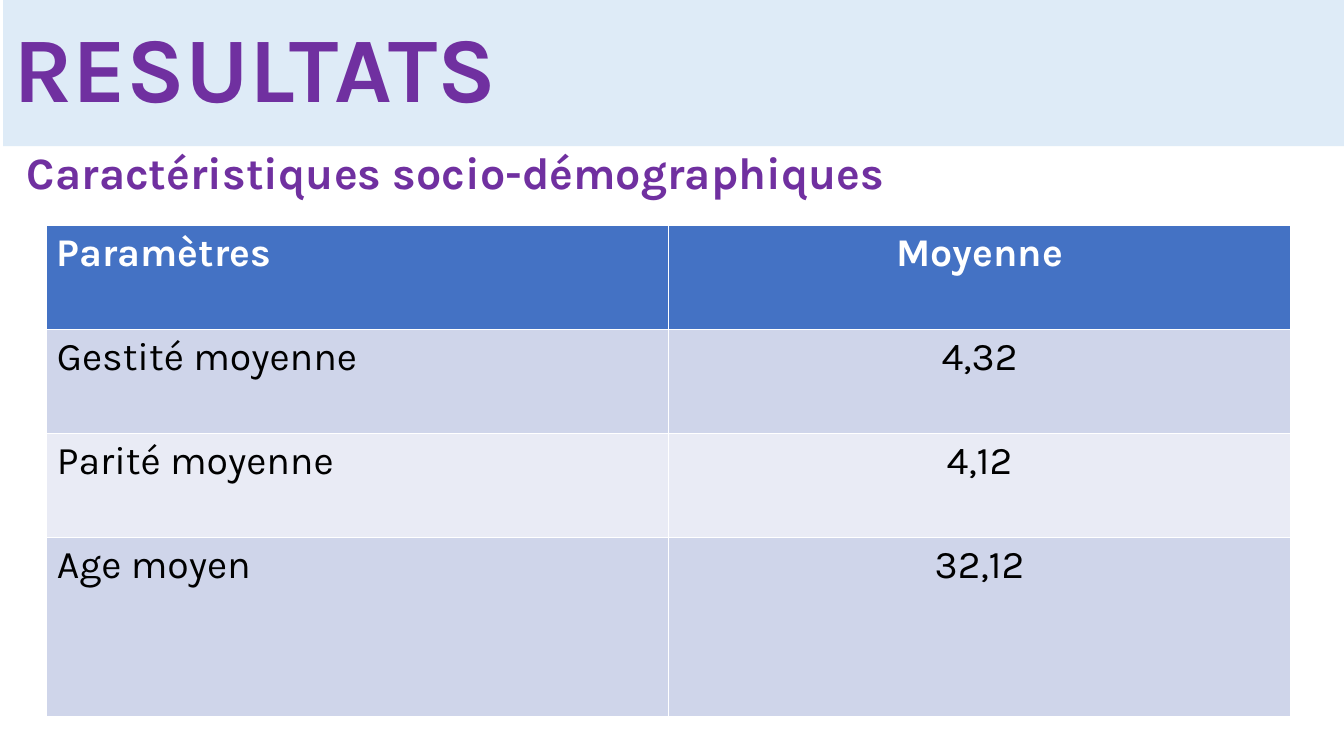
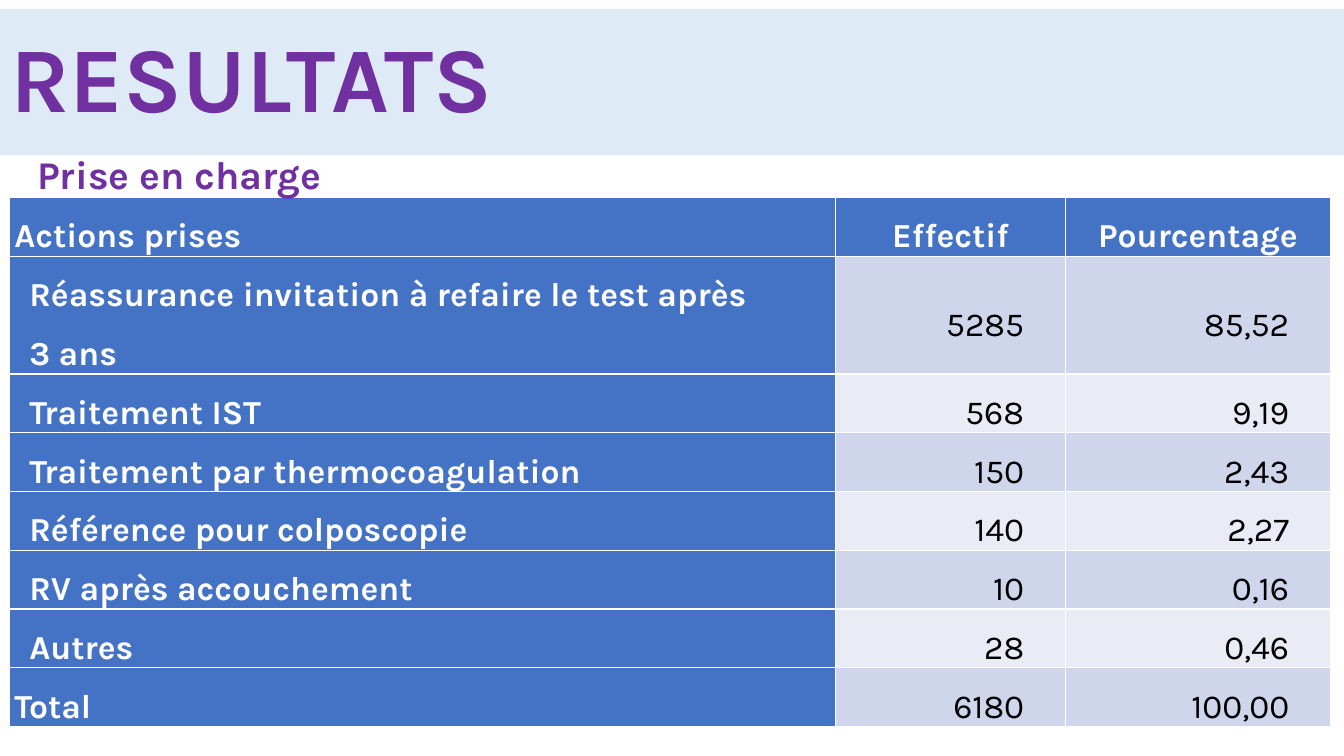
from pptx import Presentation
from pptx.dml.color import RGBColor
from pptx.enum.text import MSO_ANCHOR, MSO_AUTO_SIZE, PP_ALIGN
from pptx.util import Cm, Pt

LEFT, CENTER, RIGHT = PP_ALIGN.LEFT, PP_ALIGN.CENTER, PP_ALIGN.RIGHT
TOP, MIDDLE = MSO_ANCHOR.TOP, MSO_ANCHOR.MIDDLE
NO_AUTOFIT = MSO_AUTO_SIZE.NONE

PURPLE = RGBColor(0x70, 0x30, 0xA0)
PALE_BLUE = RGBColor(0xDE, 0xEB, 0xF7)
BLUE = RGBColor(0x44, 0x72, 0xC4)
BANDS = (RGBColor(0xCF, 0xD5, 0xEA), RGBColor(0xE9, 0xEB, 0xF5))
WHITE = RGBColor(0xFF, 0xFF, 0xFF)
BLACK = RGBColor(0, 0, 0)

FONT = "Karla"
SLIDE_WIDTH, SLIDE_HEIGHT = Cm(33.87), Cm(19.05)
TITLE_HEIGHT = Cm(3.68)
TITLE_ONLY = 5

MEANS = [
    ("Paramètres", "Moyenne"),
    ("Gestité moyenne", "4,32"),
    ("Parité moyenne", "4,12"),
    ("Age moyen", "32,12"),
]
ACTIONS = [
    ("Actions prises", "Effectif", "Pourcentage"),
    ("Réassurance invitation à refaire le test après\n3 ans", "5285", "85,52"),
    ("Traitement IST", "568", "9,19"),
    ("Traitement par thermocoagulation", "150", "2,43"),
    ("Référence pour colposcopie", "140", "2,27"),
    ("RV après accouchement", "10", "0,16"),
    ("Autres", "28", "0,46"),
    ("Total", "6180", "100,00"),
]


def write_text(frame, text, size=28, color=PURPLE, bold=True, align=LEFT, spacing=1.0):
    """Fill a text frame with one formatted paragraph per line of text."""
    for index, line in enumerate(text.split("\n")):
        paragraph = frame.add_paragraph() if index else frame.paragraphs[0]
        paragraph.alignment = align
        paragraph.line_spacing = spacing
        run = paragraph.add_run()
        run.text = line
        run.font.name = FONT
        run.font.size = Pt(size)
        run.font.bold = bold
        run.font.color.rgb = color


def add_results_slide(prs, left, top):
    """Add a slide whose title is a pale band starting at the given corner."""
    slide = prs.slides.add_slide(prs.slide_layouts[TITLE_ONLY])
    title = slide.shapes.title
    title.left, title.top = left, top
    title.width, title.height = SLIDE_WIDTH, TITLE_HEIGHT
    title.fill.solid()
    title.fill.fore_color.rgb = PALE_BLUE
    title.text_frame.auto_size = NO_AUTOFIT
    title.text_frame.vertical_anchor = MIDDLE
    write_text(title.text_frame, "RESULTATS", size=66, spacing=0.9)
    return slide


def add_subtitle(slide, text, left, top, width, **text_format):
    """Add the heading that stands between the title band and the table."""
    subtitle = slide.shapes.add_textbox(left, top, width, Cm(1.45))
    subtitle.text_frame.word_wrap = True
    write_text(subtitle.text_frame, text, **text_format)


def add_table(slide, rows, left, top, widths, heights):
    """Add an empty table with the given column widths and row heights."""
    table = slide.shapes.add_table(
        len(rows), len(widths), left, top, sum(widths), sum(heights)
    ).table
    for column, width in zip(table.columns, widths):
        column.width = width
    for row, height in zip(table.rows, heights):
        row.height = height
    return table


def fill_cell(cell, text, fill, anchor=TOP, margins=None, **text_format):
    """Colour a cell and write its text; margins are left and right."""
    cell.fill.solid()
    cell.fill.fore_color.rgb = fill
    cell.vertical_anchor = anchor
    if margins:
        cell.margin_left, cell.margin_right = margins
        cell.margin_top = cell.margin_bottom = 0
    write_text(cell.text_frame, text, **text_format)


def add_means_table(slide):
    """Add the table of socio-demographic means."""
    heights = [Cm(2.62)] * 3 + [Cm(4.52)]
    table = add_table(slide, MEANS, Cm(1.18), Cm(5.68), [Cm(15.67)] * 2, heights)
    for r, values in enumerate(MEANS):
        header = r == 0
        for c, value in enumerate(values):
            fill_cell(
                table.cell(r, c), value, BLUE if header else BANDS[(r - 1) % 2],
                color=WHITE if header else BLACK, bold=header,
                align=CENTER if c else LEFT,
            )


def add_actions_table(slide):
    """Add the table of actions taken, with counts and percentages."""
    narrow, label_indent, number_indent = Cm(0.13), Cm(0.51), Cm(1.04)
    widths = [Cm(20.83), Cm(5.79), Cm(6.68)]
    heights = [Cm(1.35), Cm(2.87)] + [Cm(1.35)] * 6
    table = add_table(slide, ACTIONS, Cm(0.23), Cm(4.98), widths, heights)
    table.first_col = True
    last = len(ACTIONS) - 1
    for r, values in enumerate(ACTIONS):
        for c, value in enumerate(values):
            heading = r == 0 or c == 0
            align = LEFT if c == 0 else CENTER if r == 0 else RIGHT
            indented = c == 0 and 0 < r < last
            margins = (
                label_indent if indented else narrow,
                narrow if heading else number_indent,
            )
            fill_cell(
                table.cell(r, c), value, BLUE if heading else BANDS[(r - 1) % 2],
                anchor=MIDDLE, margins=margins, size=24,
                color=WHITE if heading else BLACK, bold=heading,
                align=align, spacing=1.5,
            )


def main():
    """Build both results slides and save the presentation."""
    prs = Presentation()
    prs.slide_width, prs.slide_height = SLIDE_WIDTH, SLIDE_HEIGHT

    demographics = add_results_slide(prs, Cm(0.08), 0)
    add_subtitle(
        demographics, "Caractéristiques socio-démographiques",
        Cm(0.43), Cm(3.68), Cm(31.1), size=32, spacing=0.9,
    )
    add_means_table(demographics)

    care = add_results_slide(prs, 0, Cm(0.23))
    add_actions_table(care)
    add_subtitle(care, "Prise en charge", Cm(0.69), Cm(3.66), Cm(32.13))

    prs.save("out.pptx")


if __name__ == "__main__":
    main()
